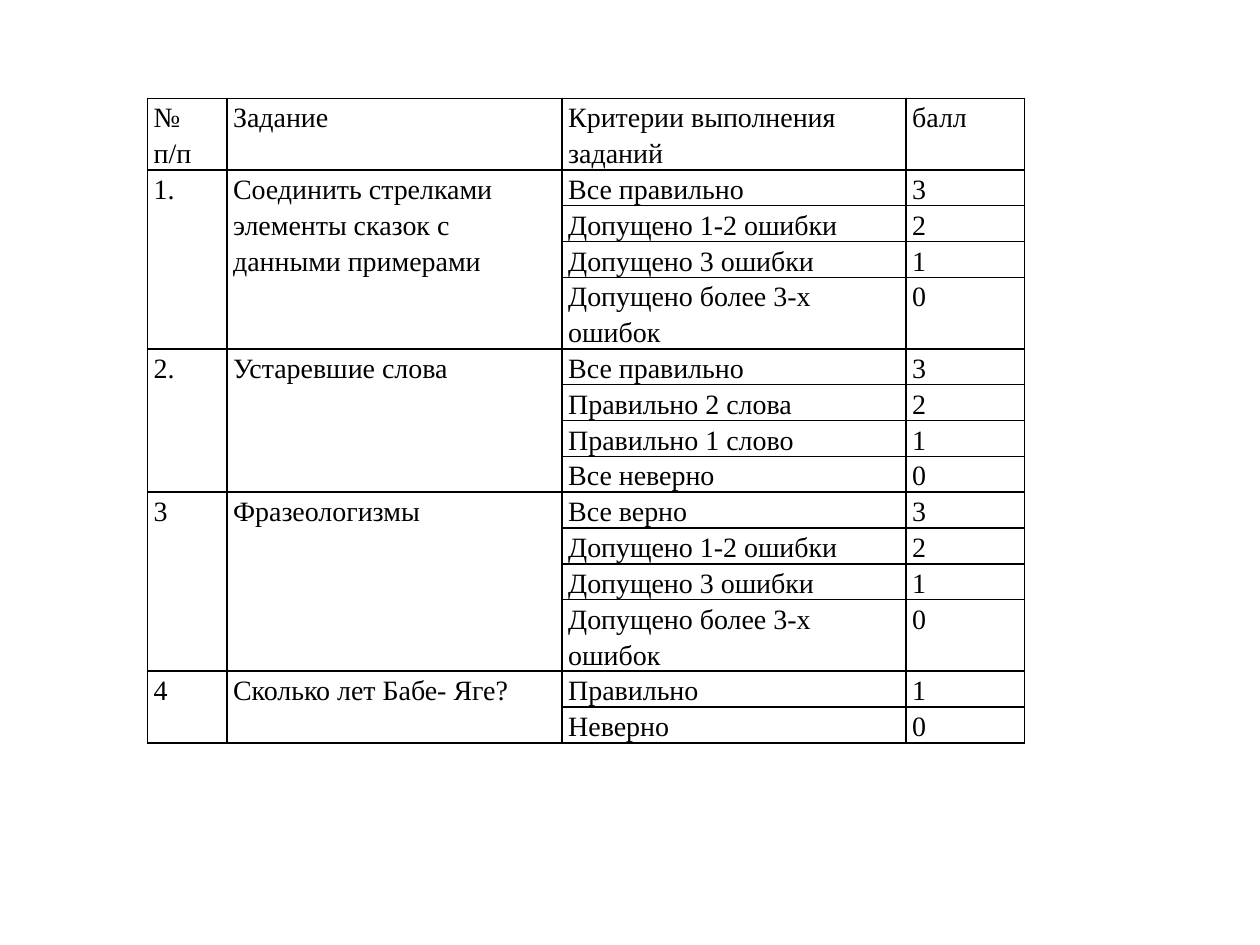
import dataclasses

import lxml.etree
import pptx
import pptx.dml.color
import pptx.oxml.ns
import pptx.util

Inches = pptx.util.Inches


@dataclasses.dataclass(frozen=True)
class Theme:
    font: str = "Times New Roman"
    size: float = 16
    ink: str = "000000"
    border_width: float = 1
    line_spacing: float = 1.15
    side_inset: float = 0.05


HEADINGS = ["№ п/п", "Задание", "Критерии выполнения заданий", "балл"]
MISTAKES = [
    ("Допущено 1-2 ошибки", "2"),
    ("Допущено 3 ошибки", "1"),
    ("Допущено более 3-х ошибок", "0"),
]
TASKS = [
    ("1.", "Соединить стрелками элементы сказок с данными примерами",
     [("Все правильно", "3"), *MISTAKES]),
    ("2.", "Устаревшие слова",
     [("Все правильно", "3"), ("Правильно 2 слова", "2"),
      ("Правильно 1 слово", "1"), ("Все неверно", "0")]),
    ("3", "Фразеологизмы", [("Все верно", "3"), *MISTAKES]),
    ("4", "Сколько лет Бабе- Яге?", [("Правильно", "1"), ("Неверно", "0")]),
]
COLUMN_WIDTHS = [0.63, 2.66, 2.73, 0.94]
LINE_HEIGHT = 0.28
WRAPPED_CRITERIA = {"Критерии выполнения заданий", "Допущено более 3-х ошибок"}


def write_text(text_frame, text, *, font, size, color, line_spacing):
    paragraph = text_frame.paragraphs[0]
    paragraph.line_spacing = line_spacing
    run = paragraph.add_run()
    run.text = text
    run.font.name = font
    run.font.size = pptx.util.Pt(size)
    run.font.color.rgb = pptx.dml.color.RGBColor.from_string(color)


class SlideBuilder:
    """Draws elements on the current slide in one style."""

    def __init__(self, slide, theme):
        self.slide = slide
        self.theme = theme

    def add_borders(self, cell):
        properties = cell._tc.get_or_add_tcPr()
        qn = pptx.oxml.ns.qn
        for position, side in enumerate(("lnL", "lnR", "lnT", "lnB")):
            line = lxml.etree.Element(qn(f"a:{side}"))
            line.set("w", str(int(pptx.util.Pt(self.theme.border_width))))
            fill = lxml.etree.SubElement(line, qn("a:solidFill"))
            lxml.etree.SubElement(fill, qn("a:srgbClr")).set("val", self.theme.ink)
            properties.insert(position, line)

    def write_cell(self, cell, text):
        theme = self.theme
        write_text(cell.text_frame, text, font=theme.font, size=theme.size,
                   color=theme.ink, line_spacing=theme.line_spacing)

    def add_score_table(self, left, top, headings, tasks):
        criteria = [pair for task in tasks for pair in task[2]]
        rows = [headings[2:], *criteria]
        heights = [LINE_HEIGHT * (2 if criterion in WRAPPED_CRITERIA else 1)
                   for criterion, score in rows]
        frame = self.slide.shapes.add_table(
            len(rows), len(headings), Inches(left), Inches(top),
            Inches(sum(COLUMN_WIDTHS)), Inches(sum(heights)))
        table = frame.table
        table.first_row = table.horz_banding = False
        for column, width in zip(table.columns, COLUMN_WIDTHS):
            column.width = Inches(width)
        for row, height in zip(table.rows, heights):
            row.height = Inches(height)
        for cell in table.iter_cells():
            cell.margin_left = cell.margin_right = Inches(self.theme.side_inset)
            cell.margin_top = cell.margin_bottom = 0
            cell.fill.background()
            self.add_borders(cell)

        for column, heading in enumerate(headings):
            self.write_cell(table.cell(0, column), heading)
        first = 1
        for number, task, results in tasks:
            last = first + len(results) - 1
            for column, text in enumerate((number, task)):
                table.cell(first, column).merge(table.cell(last, column))
                self.write_cell(table.cell(first, column), text)
            for row, result in enumerate(results, first):
                for column, text in enumerate(result, 2):
                    self.write_cell(table.cell(row, column), text)
            first = last + 1


def main():
    presentation = pptx.Presentation()
    presentation.slide_width = Inches(10)
    presentation.slide_height = Inches(7.5)
    slide = presentation.slides.add_slide(presentation.slide_layouts[6])
    SlideBuilder(slide, Theme()).add_score_table(1.17, 0.78, HEADINGS, TASKS)
    presentation.save("out.pptx")


if __name__ == "__main__":
    main()
